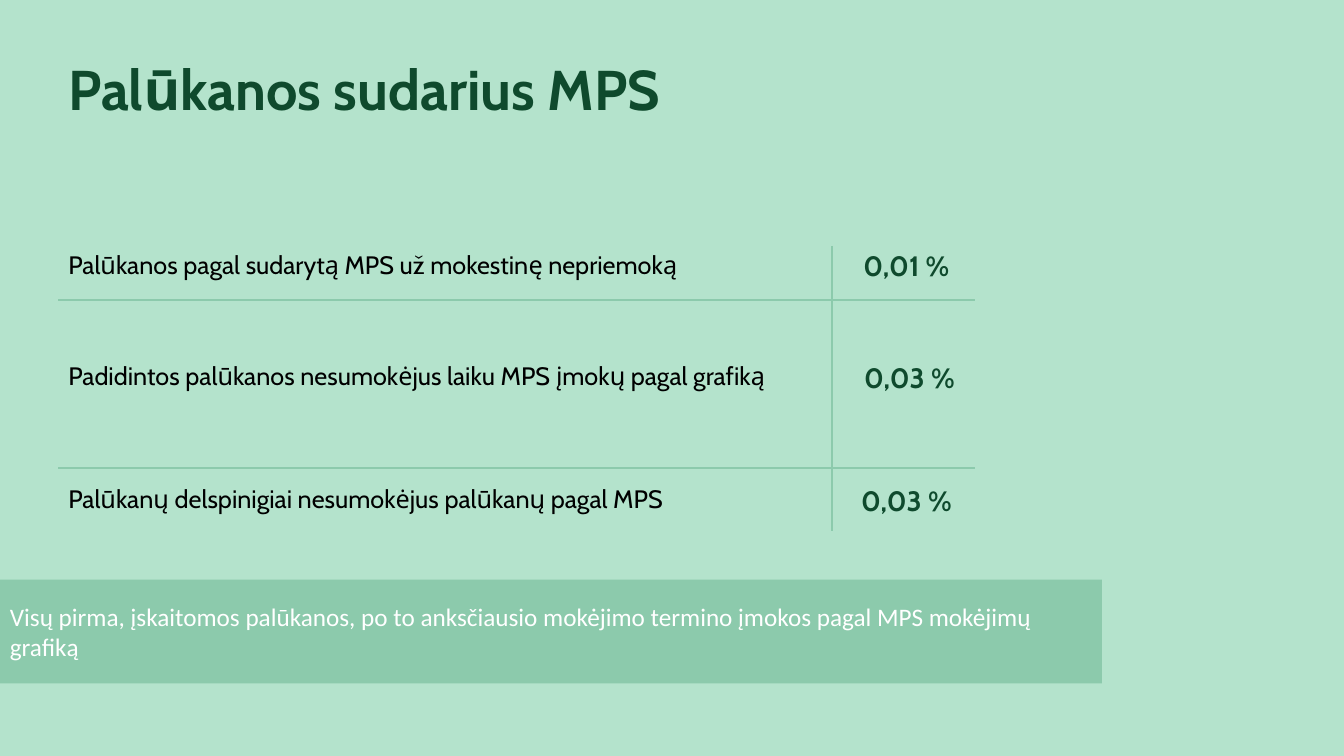
from dataclasses import dataclass

from lxml import etree
from pptx import Presentation
from pptx.dml.color import RGBColor
from pptx.enum.shapes import MSO_CONNECTOR, MSO_SHAPE
from pptx.enum.text import MSO_ANCHOR, MSO_AUTO_SIZE, PP_ALIGN
from pptx.oxml.ns import qn
from pptx.util import Inches, Pt

LEFT, CENTER = PP_ALIGN.LEFT, PP_ALIGN.CENTER
TOP, MIDDLE = MSO_ANCHOR.TOP, MSO_ANCHOR.MIDDLE
NO_FIT = MSO_AUTO_SIZE.NONE
STRAIGHT, RECT = MSO_CONNECTOR.STRAIGHT, MSO_SHAPE.RECTANGLE

MINT, SAGE, PINE = "B4E3CC", "8CCAAC", "0F4A2D"
BLACK, WHITE = "000000", "FFFFFF"
MARGIN, RATE_LEFT, RIGHT, DIVIDER = 0.58, 8.31, 9.67, 8.25

TITLE = {"name": "Cabin", "size": Pt(40), "bold": True}
LABEL = {"name": "Cabin", "size": Pt(18)}
RATE = {"name": "Cabin", "size": Pt(20), "bold": True}
NOTE = {"name": "Calibri", "size": Pt(18)}


@dataclass
class Row:
    top: float
    label: str
    rate: str
    width: float = 7.49
    height: float = 0.4
    rate_width: float = 1.36


@dataclass
class Rule:
    x1: float
    y1: float
    x2: float
    y2: float


ROWS = [
    Row(2.42, "Palūkanos pagal sudarytą MPS už mokestinę nepriemoką", "0,01 %"),
    Row(3.53, "Padidintos palūkanos nesumokėjus laiku MPS įmokų pagal grafiką",
        "0,03 %", width=7.41, height=0.71, rate_width=1.42),
    Row(4.75, "Palūkanų delspinigiai nesumokėjus palūkanų pagal MPS", "0,03 %"),
]
RULES = [Rule(RIGHT, y, MARGIN, y) for y in (2.98, 4.64)]
RULES.append(Rule(DIVIDER, 2.44, DIVIDER, 5.27))


def rgb(color: str) -> RGBColor:
    return RGBColor.from_string(color)


def write(shape, text: str, style: dict, color: str, align=LEFT, anchor=TOP) -> None:
    frame = shape.text_frame
    frame.word_wrap = True
    frame.auto_size = NO_FIT
    frame.vertical_anchor = anchor
    para = frame.paragraphs[0]
    para.alignment = align
    run = para.add_run()
    run.text = text
    for key, value in style.items():
        setattr(run.font, key, value)
    run.font.color.rgb = rgb(color)


def add_text(slide, left: float, top: float, width: float, height: float,
             text: str, style: dict, color: str, align=LEFT) -> None:
    box = slide.shapes.add_textbox(*map(Inches, (left, top, width, height)))
    write(box, text, style, color, align)


def add_title(slide, text: str) -> None:
    title = slide.shapes.title
    title.left, title.top, title.width, title.height = map(
        Inches, (MARGIN, 0.49, 12.14, 0.77))
    write(title, text, TITLE, PINE)


def add_row(slide, row: Row) -> None:
    add_text(slide, MARGIN, row.top, row.width, row.height, row.label, LABEL, BLACK)
    add_text(slide, RATE_LEFT, row.top, row.rate_width, 0.44, row.rate, RATE, PINE, CENTER)


def add_rule(slide, rule: Rule) -> None:
    ends = map(Inches, (rule.x1, rule.y1, rule.x2, rule.y2))
    line = slide.shapes.add_connector(STRAIGHT, *ends)
    line.line.color.rgb = rgb(SAGE)
    line.line.width = Pt(1.5)
    etree.SubElement(line._element.spPr, qn("a:effectLst"))


def add_note(slide, text: str) -> None:
    band = slide.shapes.add_shape(RECT, *map(Inches, (0, 5.75, 10.93, 1.03)))
    band.shadow.inherit = False
    band.fill.solid()
    band.fill.fore_color.rgb = rgb(SAGE)
    band.line.fill.background()
    write(band, text, NOTE, WHITE, anchor=MIDDLE)


def main() -> None:
    deck = Presentation()
    deck.slide_width, deck.slide_height = Inches(13.33), Inches(7.5)
    slide = deck.slides.add_slide(deck.slide_layouts.get_by_name("Title Only"))
    back = slide.background.fill
    back.solid()
    back.fore_color.rgb = rgb(MINT)

    add_title(slide, "Palūkanos sudarius MPS")
    for row in ROWS:
        add_row(slide, row)
    for rule in RULES:
        add_rule(slide, rule)
    add_note(slide, "Visų pirma, įskaitomos palūkanos, po to anksčiausio mokėjimo "
                    "termino įmokos pagal MPS mokėjimų grafiką")
    deck.save("out.pptx")


if __name__ == "__main__":
    main()
